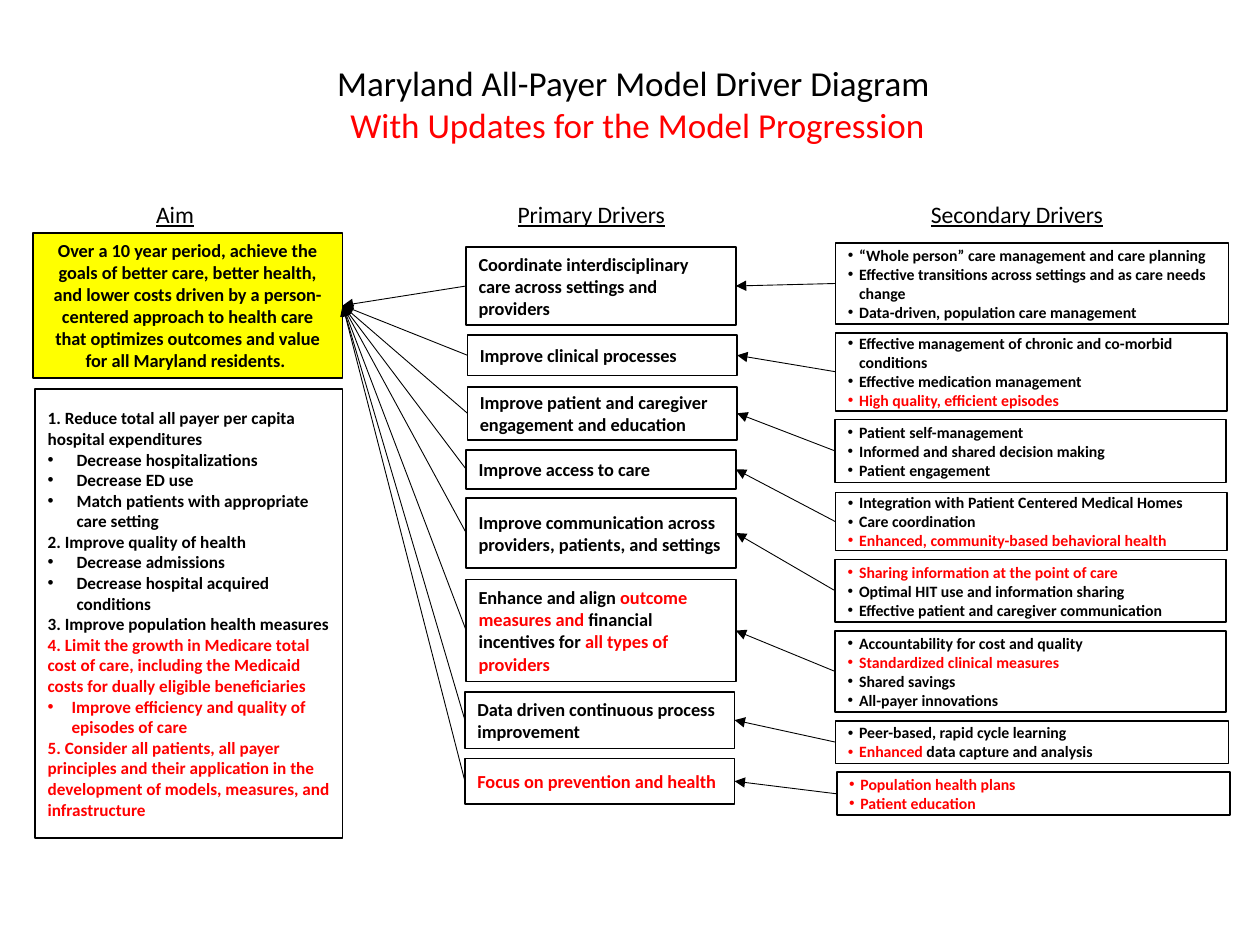
from lxml.etree import SubElement
from pptx import Presentation
from pptx.dml.color import RGBColor
from pptx.enum.shapes import MSO_CONNECTOR, MSO_SHAPE
from pptx.enum.text import MSO_ANCHOR, MSO_AUTO_SIZE, PP_ALIGN
from pptx.oxml.ns import qn
from pptx.util import Pt

SCALE = 9144
FONT = "Calibri"
COLOURS = {"ink": "000000", "update": "FF0000", "aim": "FFFF00"}
LEFT, RIGHT = 1, 3
BULLET_INDENT = 9

TITLE = ["Maryland All-Payer Model Driver Diagram ", "~With Updates for the Model Progression"]
HEADINGS = [("Aim", (114, 154, 121, 33)), ("Primary Drivers", (401, 154, 151, 33)),
            ("Secondary Drivers", (729, 154, 165, 33))]
AIM = ("Over a 10 year period, achieve the goals of better care, better health, and lower costs "
       "driven by a person-centered approach to health care that optimizes outcomes and value "
       "for all Maryland residents. ")
GOALS = [
    (0, "1. Reduce total all payer per capita hospital expenditures"),
    (23, "Decrease hospitalizations"),
    (23, "Decrease ED use"),
    (23, "Match patients with appropriate care setting"),
    (0, "2. Improve quality of health"),
    (23, "Decrease admissions"),
    (23, "Decrease hospital acquired conditions"),
    (0, "3. Improve population health measures"),
    (0, "~4. Limit the growth in Medicare total cost of care, including the Medicaid costs "
        "for dually eligible beneficiaries"),
    (19, "~Improve efficiency and quality of episodes of care"),
    (0, "~5. Consider all patients, all payer principles and their application in the "
        "development of models, measures, and infrastructure"),
]
DRIVERS = [
    ((370, 196, 214, 62), "Coordinate interdisciplinary care across settings and providers",
     (663, 193, 312, 64), ["“Whole person” care management and care planning",
                           "Effective transitions across settings and as care needs change",
                           "Data-driven, population care management"]),
    ((371, 266, 214, 32), "Improve clinical processes",
     (663, 264, 311, 62), ["Effective management of chronic and co-morbid conditions",
                           "Effective medication management",
                           "~High quality, efficient episodes"]),
    ((371, 307, 214, 42), "Improve patient and caregiver engagement and education",
     (663, 333, 310, 50), ["Patient self-management", "Informed and shared decision making",
                           "Patient engagement"]),
    ((370, 357, 214, 31), "Improve access to care",
     (663, 391, 311, 46), ["Integration with Patient Centered Medical Homes",
                           "Care coordination",
                           "~Enhanced, community-based behavioral health"]),
    ((370, 395, 214, 56), "Improve communication across providers, patients, and settings",
     (663, 444, 310, 50), ["~Sharing information at the point of care",
                           "Optimal HIT use and information sharing",
                           "Effective patient and caregiver communication"]),
    ((370, 460, 214, 81),
     "Enhance and align ~outcome measures and ~financial incentives for ~all types of providers",
     (663, 501, 310, 64), ["Accountability for cost and quality",
                           "~Standardized clinical measures", "Shared savings",
                           "All-payer innovations"]),
    ((369, 549, 214, 45), "Data driven continuous process improvement",
     (663, 572, 312, 34), ["Peer-based, rapid cycle learning",
                           "~Enhanced~ data capture and analysis"]),
    ((369, 602, 214, 36), "~Focus on prevention and health",
     (664, 613, 312, 34), ["~Population health plans", "~Patient education"]),
]


def px(*lengths):
    """Turn whole px into EMU."""
    return [length * SCALE for length in lengths]


def rgb(name):
    """Look up a named colour."""
    return RGBColor.from_string(COLOURS[name])


def add_bullet(para, indent):
    """Give a paragraph a hanging bullet."""
    properties = para._p.get_or_add_pPr()
    properties.set("marL", str(indent * SCALE))
    properties.set("indent", str(-indent * SCALE))
    SubElement(properties, qn("a:buFont")).set("typeface", "Arial")
    SubElement(properties, qn("a:buChar")).set("char", "•")


def write(frame, lines, size, align=PP_ALIGN.LEFT, bold=False, underline=None):
    """Write (indent, text) lines, where each ~ switches between ink and update colour."""
    frame.word_wrap = True
    for index, (indent, text) in enumerate(lines):
        para = frame.add_paragraph() if index else frame.paragraphs[0]
        para.alignment = align
        if indent:
            add_bullet(para, indent)
        for order, part in enumerate(text.split("~")):
            if part:
                span = para.add_run()
                span.text = part
                span.font.name, span.font.size = FONT, Pt(size)
                span.font.bold, span.font.underline = bold, underline
                span.font.color.rgb = rgb("update" if order % 2 else "ink")


def add_card(page, box, lines, size, fill=None, align=PP_ALIGN.LEFT):
    """Add an outlined rectangle with bold text."""
    card = page.shapes.add_shape(MSO_SHAPE.RECTANGLE, *px(*box))
    card.shadow.inherit = False
    if fill:
        card.fill.solid()
        card.fill.fore_color.rgb = rgb(fill)
    else:
        card.fill.background()
    card.line.color.rgb = rgb("ink")
    card.line.width = Pt(1)
    card.text_frame.vertical_anchor = MSO_ANCHOR.MIDDLE
    write(card.text_frame, lines, size, align, bold=True)
    return card


def add_arrow(page, source, target):
    """Join the left side of one card to the right side of another."""
    arrow = page.shapes.add_connector(MSO_CONNECTOR.STRAIGHT, 0, 0, 0, 0)
    arrow.begin_connect(source, LEFT)
    arrow.end_connect(target, RIGHT)
    arrow.line.color.rgb = rgb("ink")
    arrow.line.width = Pt(0.5)
    SubElement(arrow.line._get_or_add_ln(), qn("a:tailEnd")).set("type", "triangle")
    SubElement(arrow._element.spPr, qn("a:effectLst"))


def add_title(page, box):
    """Place the two-line title."""
    title = page.shapes.title
    title.left, title.top, title.width, title.height = px(*box)
    title.text_frame.auto_size = MSO_AUTO_SIZE.NONE
    write(title.text_frame, [(0, line) for line in TITLE], 20, PP_ALIGN.CENTER)


def add_heading(page, text, box):
    """Add an underlined column heading."""
    heading = page.shapes.add_textbox(*px(*box))
    write(heading.text_frame, [(0, text)], 13.5, underline=True)


def add_aim(page, box):
    """Add the aim with its goals below and return the aim card."""
    left, top, width, height = box
    aim = add_card(page, (left, top, width, 115), [(0, AIM)], 10.5, "aim", PP_ALIGN.CENTER)
    add_card(page, (left + 2, top + 124, width - 2, height - 124), GOALS, 9.8)
    return aim


def add_driver(page, aim, primary_box, primary_text, secondary_box, secondary_lines):
    """Add a primary driver with its secondary drivers and both arrows."""
    primary = add_card(page, primary_box, [(0, primary_text)], 10.5)
    bullets = [(BULLET_INDENT, line) for line in secondary_lines]
    secondary = add_card(page, secondary_box, bullets, 9)
    add_arrow(page, primary, aim)
    add_arrow(page, secondary, primary)


def main():
    """Build the driver diagram."""
    deck = Presentation()
    deck.slide_width, deck.slide_height = px(1000, 750)
    page = deck.slides.add_slide(deck.slide_layouts[5])
    add_title(page, (174, 44, 664, 77))
    for text, box in HEADINGS:
        add_heading(page, text, box)
    aim = add_aim(page, (26, 185, 246, 480))
    for driver in DRIVERS:
        add_driver(page, aim, *driver)
    deck.save("out.pptx")


if __name__ == "__main__":
    main()
